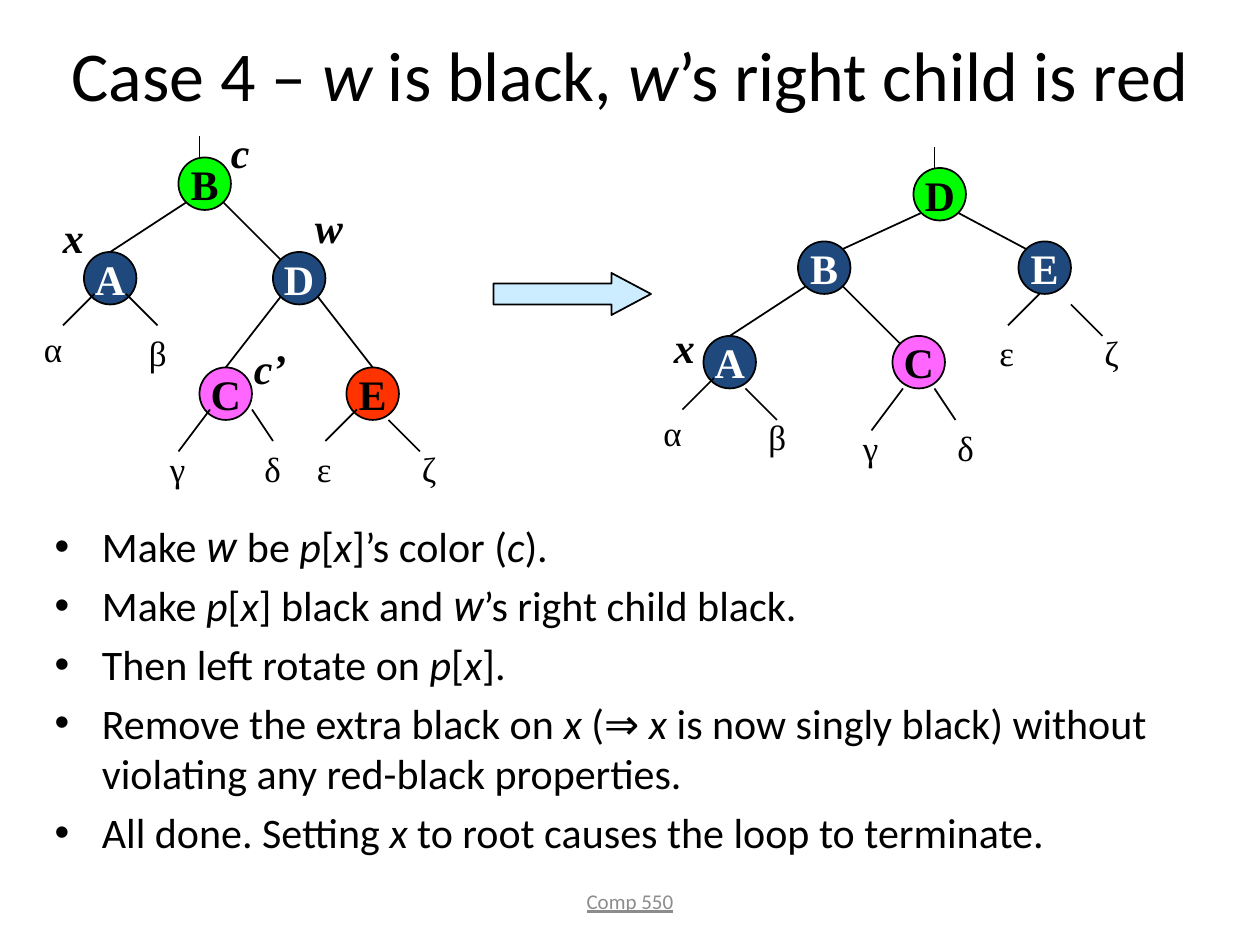
from lxml.etree import SubElement
from pptx import Presentation
from pptx.dml.color import RGBColor
from pptx.enum.shapes import MSO_CONNECTOR as Connector, MSO_SHAPE as Shape
from pptx.enum.text import MSO_ANCHOR as Anchor, MSO_AUTO_SIZE as AutoSize, PP_ALIGN as Align
from pptx.oxml.ns import qn
from pptx.util import Pt

PX = 7620
NODE = 50
BLACK = RGBColor(0x00, 0x00, 0x00)
WHITE = RGBColor(0xFF, 0xFF, 0xFF)
GRAY = RGBColor(0x8C, 0x8C, 0x8C)
NAVY = RGBColor(0x1F, 0x49, 0x7D)
GREEN = RGBColor(0x00, 0xFF, 0x00)
PINK = RGBColor(0xFF, 0x66, 0xFF)
RED = RGBColor(0xFF, 0x33, 0x00)
PALE_BLUE = RGBColor(0xCC, 0xEC, 0xFF)
SANS, SERIF, ACCENT = "Calibri", "Times New Roman", "Roboto"

RIM = {"top": (25, 0), "nw": (7, 7), "ne": (43, 7), "sw": (7, 43), "se": (43, 43)}
LABEL_WIDTHS = {"α": 46, "β": 42, "γ": 38, "δ": 41, "ε": 38, "ζ": 41,
                "x": 44, "w": 50, "c": 42, "c’": 55}

TITLE = "Case 4 – *w* is black, *w*’s right child is red"
STEPS = [
    "Make *w *be *p*[*x*]’s color (*c*).",
    "Make *p*[*x*] black and *w*’s right child black.",
    "Then left rotate on *p*[*x*].",
    "Remove the extra black on *x *(⇒ *x *is now singly black) "
    "without violating any red-black properties.",
    "All done. Setting *x *to root causes the loop to terminate.",
]

BEFORE = {
    "nodes": {"B": (140, 40, GREEN), "A": (50, 130, NAVY), "D": (230, 130, NAVY),
              "C": (160, 240, PINK), "E": (300, 240, RED)},
    "edges": [("B", "sw", "A", "top"), ("B", "se", "D", "nw"),
              ("D", "sw", "C", "top"), ("D", "se", "E", "top")],
    "stubs": [(160, 20, 160, 40), (60, 170, 30, 200), (90, 170, 120, 200),
              (170, 280, 140, 320), (210, 280, 230, 310),
              (310, 280, 280, 310), (340, 290, 370, 320)],
    "subtrees": {"α": (0, 196), "β": (100, 200), "γ": (120, 310),
                 "δ": (210, 310), "ε": (260, 310), "ζ": (360, 310)},
    "pointers": {"x": (18, 86), "w": (258, 76), "c": (178, 5), "c’": (200, 210)},
}
AFTER = {
    "nodes": {"D": (250, 20, GREEN), "B": (140, 90, NAVY), "E": (350, 90, NAVY),
              "A": (50, 180, NAVY), "C": (230, 180, PINK)},
    "edges": [("D", "sw", "B", "ne"), ("D", "se", "E", "nw"),
              ("B", "sw", "A", "top"), ("B", "se", "C", "nw")],
    "stubs": [(270, 0, 270, 20), (60, 220, 30, 250), (90, 230, 120, 260),
              (240, 230, 210, 270), (270, 230, 290, 260),
              (370, 140, 340, 170), (400, 150, 430, 180)],
    "subtrees": {"α": (0, 246), "β": (100, 250), "γ": (190, 260),
                 "δ": (280, 260), "ε": (320, 170), "ζ": (420, 170)},
    "pointers": {"x": (10, 160)},
}


def scaled(*lengths):
    """Turn px lengths into EMU."""
    return [length * PX for length in lengths]


def style_font(font, name, size, color, bold=False, italic=False):
    """Set the look of one font."""
    font.name, font.size, font.bold, font.italic = name, Pt(size), bold, italic
    font.color.rgb = color


def add_marked_runs(paragraph, marked, size, variable_fonts):
    """Fill a paragraph, with the parts between asterisks in italics."""
    for index, part in enumerate(marked.split("*")):
        if part:
            run = paragraph.add_run()
            run.text = part
            italic = index % 2 == 1
            name = variable_fonts.get(part.strip(), SANS) if italic else SANS
            style_font(run.font, name, size, BLACK, italic=italic)


def place(placeholder, box):
    """Move a placeholder into its box and return its text frame."""
    placeholder.left, placeholder.top, placeholder.width, placeholder.height = scaled(*box)
    placeholder.text_frame.auto_size = AutoSize.NONE
    return placeholder.text_frame


def add_title(slide, box):
    """Fill the title placeholder."""
    heading = place(slide.shapes.title, box)
    heading.vertical_anchor = Anchor.MIDDLE
    add_marked_runs(heading.paragraphs[0], TITLE, 40, {})


def add_steps(slide, box):
    """Fill the body placeholder with the bulleted steps."""
    steps = place(slide.placeholders[1], box)
    for index, step in enumerate(STEPS):
        paragraph = steps.add_paragraph() if index else steps.paragraphs[0]
        add_marked_runs(paragraph, step, 24, {"w": ACCENT})


def add_footer(slide, box):
    """Write the course name at the foot of the slide."""
    footer = slide.shapes.add_textbox(*scaled(*box)).text_frame
    footer.word_wrap = True
    footer.vertical_anchor = Anchor.MIDDLE
    footer.text = "Comp 550"
    paragraph = footer.paragraphs[0]
    paragraph.alignment = Align.CENTER
    style_font(paragraph.runs[0].font, SANS, 12, GRAY)
    paragraph.runs[0].font.underline = True


def add_outlined(slide, kind, box, fill):
    """Add a filled shape with a thin black outline."""
    shape = slide.shapes.add_shape(kind, *scaled(*box))
    shape.shadow.inherit = False
    shape.fill.solid()
    shape.fill.fore_color.rgb = fill
    shape.line.color.rgb = BLACK
    shape.line.width = Pt(1)
    return shape


def add_line(slide, *ends):
    """Draw a thin black line between two points."""
    line = slide.shapes.add_connector(Connector.STRAIGHT, *scaled(*ends))
    line.line.color.rgb = BLACK
    line.line.width = Pt(1)
    SubElement(line._element.spPr, qn("a:effectLst"))


def add_node(slide, key, left, top, fill):
    """Draw one tree node with its key."""
    node = add_outlined(slide, Shape.OVAL, (left, top, NODE, NODE), fill).text_frame
    node.word_wrap = False
    node.vertical_anchor = Anchor.MIDDLE
    node.text = key
    node.paragraphs[0].alignment = Align.CENTER
    color = WHITE if fill == NAVY else BLACK
    style_font(node.paragraphs[0].runs[0].font, SERIF, 24, color, bold=True)


def add_label(slide, label, left, top, size, strong):
    """Write a subtree or pointer name."""
    box = scaled(left, top, LABEL_WIDTHS[label], 60 if strong else 52)
    name = slide.shapes.add_textbox(*box).text_frame
    name.word_wrap = False
    name.auto_size = AutoSize.SHAPE_TO_FIT_TEXT
    name.text = label
    style_font(name.paragraphs[0].runs[0].font, SERIF, size, BLACK, strong, strong)


def add_tree(slide, tree, left, top):
    """Draw a tree relative to its top left corner."""
    nodes = tree["nodes"]

    def rim_point(key, side):
        """Find a point on the rim of a node."""
        return left + nodes[key][0] + RIM[side][0], top + nodes[key][1] + RIM[side][1]

    for key, (x, y, fill) in nodes.items():
        add_node(slide, key, left + x, top + y, fill)
    for parent, parent_side, child, child_side in tree["edges"]:
        add_line(slide, *rim_point(parent, parent_side), *rim_point(child, child_side))
    for x1, y1, x2, y2 in tree["stubs"]:
        add_line(slide, left + x1, top + y1, left + x2, top + y2)
    for group, size, strong in (("subtrees", 20, False), ("pointers", 24, True)):
        for label, (x, y) in tree[group].items():
            add_label(slide, label, left + x, top + y, size, strong)


def add_rotation_arrow(slide, box):
    """Draw the arrow from the first tree to the second."""
    arrow = add_outlined(slide, Shape.RIGHT_ARROW, box, PALE_BLUE)
    arrow.adjustments[1] = 0.94


def main():
    """Build and save the slide."""
    deck = Presentation()
    deck.slide_width, deck.slide_height = scaled(1200, 900)
    slide = deck.slides.add_slide(deck.slide_layouts[1])
    add_title(slide, (0, 10, 1200, 120))
    add_steps(slide, (40, 490, 1110, 340))
    add_footer(slide, (410, 834, 380, 48))
    add_tree(slide, BEFORE, 30, 110)
    add_tree(slide, AFTER, 620, 140)
    add_rotation_arrow(slide, (470, 260, 150, 40))
    deck.save("out.pptx")


if __name__ == "__main__":
    main()
